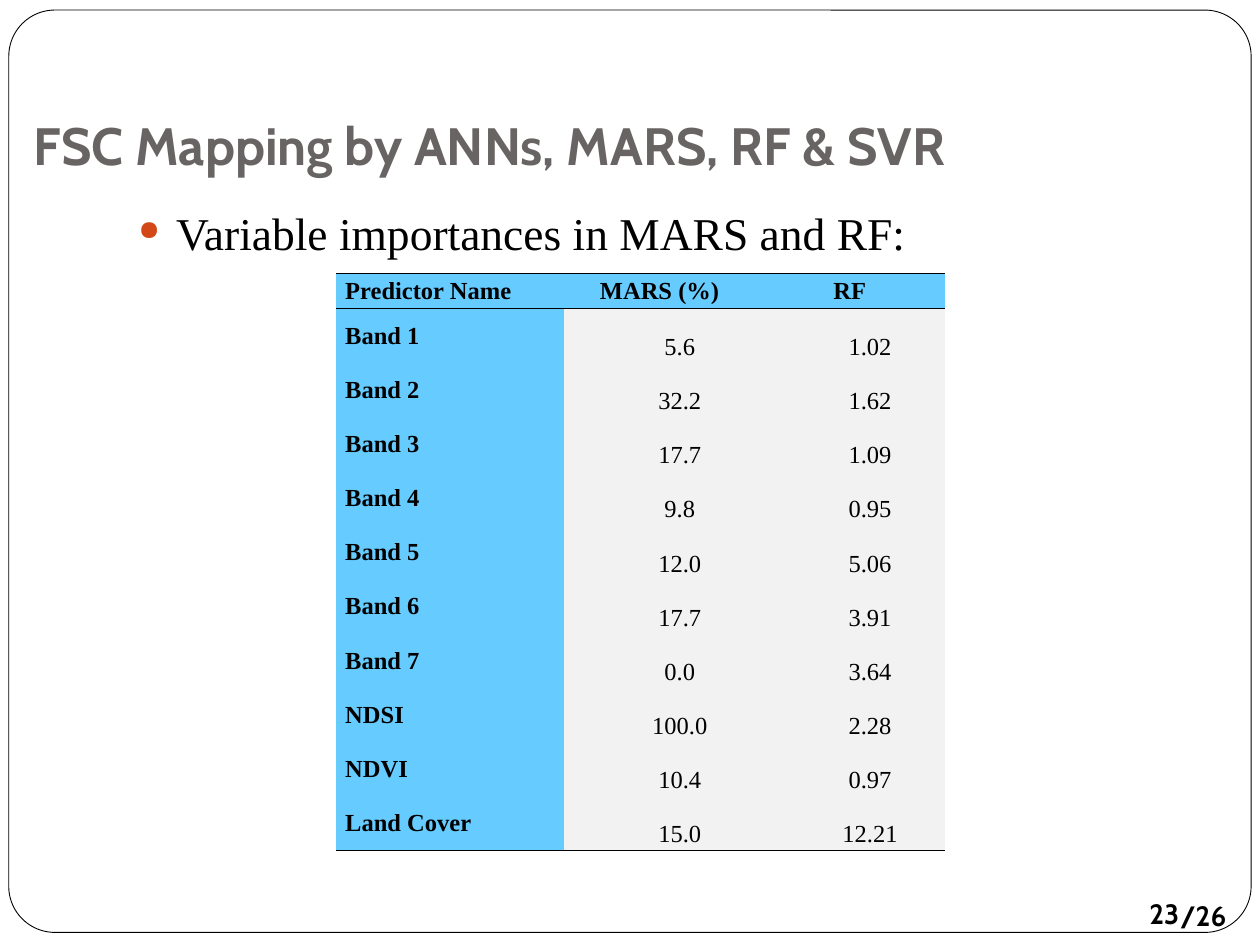
from pptx import Presentation
from pptx.dml.color import RGBColor
from pptx.enum.shapes import MSO_SHAPE as Shape
from pptx.enum.text import MSO_ANCHOR as Anchor, PP_ALIGN as Align
from pptx.oxml.ns import qn
from pptx.util import Inches, Pt
from lxml.etree import SubElement

COLORS = {
    "black": "000000", "paper": "FFFFFF", "title": "696464",
    "bullet": "D34817", "label": "66CCFF", "value": "F2F2F2",
}
SERIF, SANS = "Times New Roman", "Cabin"
NO_GRID_STYLE = "{2D5ABB26-0587-4C30-8999-92F81FD0307C}"
HEADINGS = ("Predictor Name", "MARS (%)", "RF")
IMPORTANCES = (
    ("Band 1", "5.6", "1.02"),
    ("Band 2", "32.2", "1.62"),
    ("Band 3", "17.7", "1.09"),
    ("Band 4", "9.8", "0.95"),
    ("Band 5", "12.0", "5.06"),
    ("Band 6", "17.7", "3.91"),
    ("Band 7", "0.0", "3.64"),
    ("NDSI", "100.0", "2.28"),
    ("NDVI", "10.4", "0.97"),
    ("Land Cover", "15.0", "12.21"),
)


def rgb(name):
    """Return the named colour."""
    return RGBColor.from_string(COLORS[name])


def add_run(paragraph, text, size, font, bold=False, color="black"):
    """Add one formatted run to a paragraph."""
    run = paragraph.add_run()
    run.text = text
    run.font.size = Pt(size)
    run.font.name = font
    run.font.bold = bold
    run.font.color.rgb = rgb(color)


def add_text(slide, box, text, size, font, bold=False, color="black"):
    """Add a wrapping text box and return its frame."""
    frame = slide.shapes.add_textbox(*map(Inches, box)).text_frame
    frame.word_wrap = True
    add_run(frame.paragraphs[0], text, size, font, bold, color)
    return frame


def add_bullet(paragraph):
    """Give a paragraph a hanging round bullet."""
    props = paragraph._p.get_or_add_pPr()
    props.set("marL", str(Inches(0.3)))
    props.set("indent", str(Inches(-0.3)))
    tint = SubElement(props, qn("a:buClr"))
    SubElement(tint, qn("a:srgbClr"), val=COLORS["bullet"])
    SubElement(props, qn("a:buSzPct"), val="60000")
    SubElement(props, qn("a:buChar"), char="●")


def add_page_border(slide):
    """Draw the thin rounded border around the page."""
    border = slide.shapes.add_shape(
        Shape.ROUNDED_RECTANGLE, *map(Inches, (0.07, 0.08, 9.86, 7.32)))
    border.shadow.inherit = False
    border.adjustments[0] = 0.05
    border.fill.solid()
    border.fill.fore_color.rgb = rgb("paper")
    border.line.color.rgb = rgb("black")
    border.line.width = Pt(0.5)


def add_page_number(slide, number):
    """Place the page number in an unfilled ellipse."""
    badge = slide.shapes.add_shape(Shape.OVAL, *map(Inches, (8.78, 6.98, 0.92, 0.54)))
    badge.shadow.inherit = False
    badge.fill.background()
    badge.line.fill.background()
    frame = badge.text_frame
    frame.margin_left = frame.margin_right = frame.margin_top = frame.margin_bottom = 0
    frame.word_wrap = False
    frame.vertical_anchor = Anchor.MIDDLE
    frame.paragraphs[0].alignment = Align.CENTER
    add_run(frame.paragraphs[0], number, 16, SANS, bold=True)


def add_rule(cell, side):
    """Draw a 1 pt rule on one side of a cell."""
    rule = SubElement(cell._tc.get_or_add_tcPr(), qn(f"a:{side}"), w=str(Pt(1)))
    paint = SubElement(rule, qn("a:solidFill"))
    SubElement(paint, qn("a:srgbClr"), val=COLORS["black"])


def fill_cell(cell, text, is_heading, is_label, rules):
    """Write and format one cell of the importance table."""
    for side in rules:
        add_rule(cell, side)
    strong = is_heading or is_label
    cell.fill.solid()
    cell.fill.fore_color.rgb = rgb("label" if strong else "value")
    cell.vertical_anchor = Anchor.MIDDLE
    cell.margin_left = cell.margin_right = Inches(0.07)
    cell.margin_top = cell.margin_bottom = 0
    paragraph = cell.text_frame.paragraphs[0]
    if not is_label:
        paragraph.alignment = Align.CENTER
    if not strong:
        paragraph.line_spacing = 1.84
        paragraph._p.get_or_add_pPr().set("indent", str(Inches(0.32)))
    add_run(paragraph, text, 14, SERIF, bold=strong)


def add_importance_table(slide):
    """Build the table of variable importances."""
    rows = (HEADINGS, *IMPORTANCES)
    last = len(rows) - 1
    table = slide.shapes.add_table(
        len(rows), len(HEADINGS), *map(Inches, (2.67, 2.17, 4.83, 4.58))).table
    table.horz_banding = False
    table._tbl.tblPr.find(qn("a:tableStyleId")).text = NO_GRID_STYLE
    for column, width in zip(table.columns, (1.81, 1.51, 1.51)):
        column.width = Inches(width)
    for r, values in enumerate(rows):
        table.rows[r].height = Inches(0.43 if r else 0.28)
        rules = {0: ("lnT", "lnB"), last: ("lnB",)}.get(r, ())
        for c, text in enumerate(values):
            fill_cell(table.cell(r, c), text, r == 0, c == 0, rules)


def main():
    """Build and save the slide."""
    deck = Presentation()
    deck.slide_width, deck.slide_height = Inches(10), Inches(7.5)
    slide = deck.slides.add_slide(deck.slide_layouts[6])
    add_page_border(slide)
    add_text(slide, (9.27, 7.08, 0.67, 0.37), "/26", 16, SANS, bold=True)
    body = add_text(slide, (1, 1.58, 8.5, 5),
                    "Variable importances in MARS and RF:", 26, SERIF)
    add_bullet(body.paragraphs[0])
    add_page_number(slide, "23")
    title = add_text(slide, (0.17, 0.25, 8.5, 1.25),
                     "FSC Mapping by ANNs, MARS, RF & SVR", 30, SANS, True, "title")
    title.vertical_anchor = Anchor.BOTTOM
    title.margin_bottom = Inches(0.1)
    add_importance_table(slide)
    deck.save("out.pptx")


if __name__ == "__main__":
    main()
